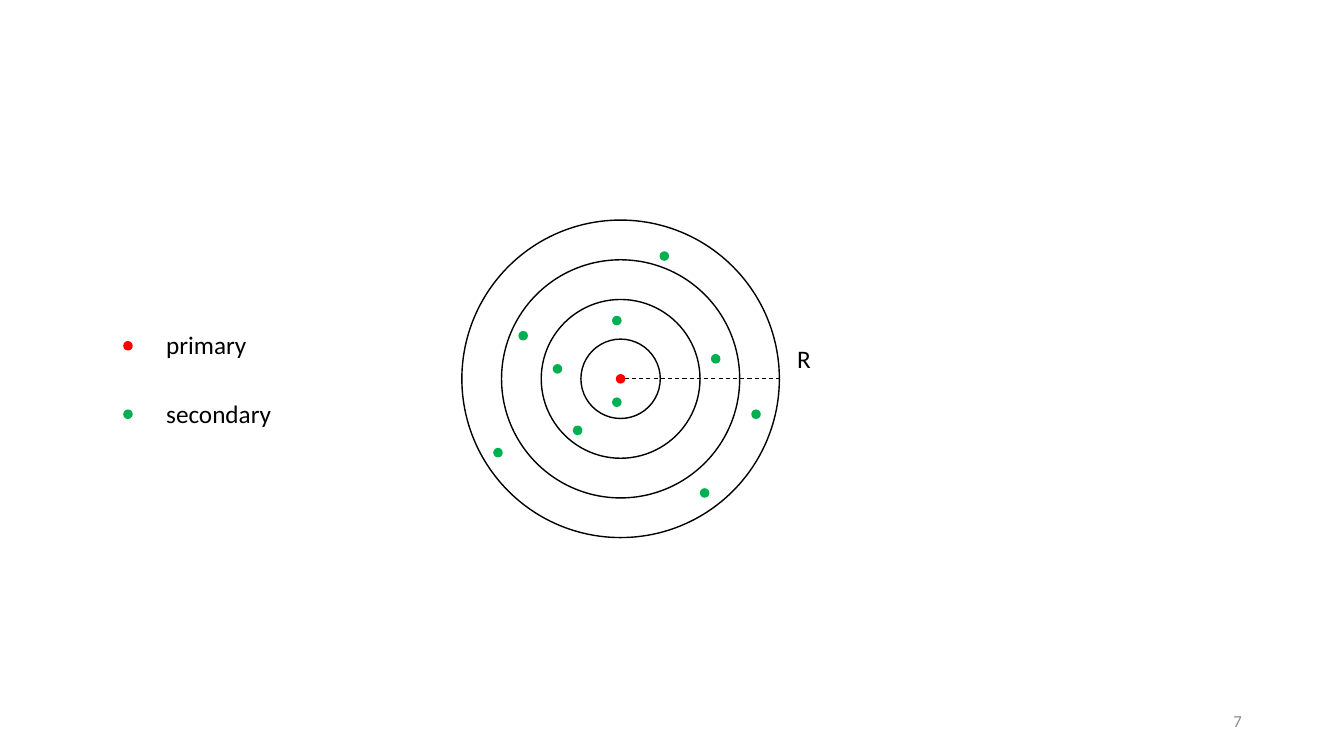
from lxml.etree import SubElement
from pptx import Presentation
from pptx.dml.color import RGBColor
from pptx.enum.dml import MSO_LINE
from pptx.enum.shapes import MSO_CONNECTOR, MSO_SHAPE
from pptx.enum.text import MSO_ANCHOR, PP_ALIGN
from pptx.oxml.ns import qn
from pptx.util import Pt

BLACK = RGBColor(0x00, 0x00, 0x00)
WHITE = RGBColor(0xFF, 0xFF, 0xFF)
RED = RGBColor(0xFF, 0x00, 0x00)
GREEN = RGBColor(0x00, 0xB0, 0x50)
GREY = RGBColor(0x8C, 0x8C, 0x8C)

FONT = "Calibri"
CX, CY = 443.3, 270.6
RING_STEP = 28.35
RINGS = 4
DOT_RADIUS = 2.9

# Centres of the secondary dots
SECONDARY = [
    (373.7, 239.8), (474.5, 182.9), (440.6, 287.3), (412.6, 307.4),
    (355.7, 323.3), (398.2, 263.5), (511.2, 256.3), (440.6, 229),
    (503.3, 352.1), (540, 295.9),
]

LEGEND_X = 91.4
LEGEND = [("primary", RED, 247), ("secondary", GREEN, 295.9)]


def add_circle(s, x, y, radius, fill, line):
    sp = s.shapes.add_shape(MSO_SHAPE.OVAL, Pt(x - radius), Pt(y - radius),
                            Pt(2 * radius), Pt(2 * radius))
    sp.shadow.inherit = False
    sp.fill.solid()
    sp.fill.fore_color.rgb = fill
    sp.line.color.rgb = line
    sp.line.width = Pt(1)


def add_dot(s, x, y, color):
    add_circle(s, x, y, DOT_RADIUS, color, color)


def add_dashed_line(s, x1, y1, x2, y2):
    c = s.shapes.add_connector(MSO_CONNECTOR.STRAIGHT,
                               Pt(x1), Pt(y1), Pt(x2), Pt(y2))
    c.line.color.rgb = BLACK
    c.line.width = Pt(0.75)
    c.line.dash_style = MSO_LINE.DASH
    SubElement(c._element.spPr, qn("a:effectLst"))


def add_label(s, text, x, y, width, size=18, color=BLACK,
              align=PP_ALIGN.LEFT, anchor=MSO_ANCHOR.TOP, wrap=False):
    tf = s.shapes.add_textbox(Pt(x), Pt(y), Pt(width), Pt(29)).text_frame
    tf.word_wrap = wrap
    tf.vertical_anchor = anchor
    p = tf.paragraphs[0]
    p.text = text
    p.alignment = align
    font = p.runs[0].font
    font.name = FONT
    font.size = Pt(size)
    font.color.rgb = color


def main():
    prs = Presentation()
    prs.slide_width, prs.slide_height = Pt(960), Pt(540)
    s = prs.slides.add_slide(prs.slide_layouts[6])

    # Concentric rings, largest at the back
    for n in range(RINGS, 0, -1):
        add_circle(s, CX, CY, n * RING_STEP, WHITE, BLACK)

    # Primary in the centre, secondaries around it
    add_dot(s, CX, CY, RED)
    for x, y in SECONDARY:
        add_dot(s, x, y, GREEN)

    # Radius
    add_dashed_line(s, CX + DOT_RADIUS, CY, CX + RINGS * RING_STEP, CY)
    add_label(s, "R", 562.3, 241.9, 24.5, wrap=True)

    # Legend
    for text, color, y in LEGEND:
        add_dot(s, LEGEND_X, y, color)
        add_label(s, text, 111.6, y - 15.1, 90 if color == GREEN else 72.7)

    # Slide number
    add_label(s, "7", 678.2, 500.5, 216, 12, GREY,
              PP_ALIGN.RIGHT, MSO_ANCHOR.MIDDLE, wrap=True)

    prs.save("out.pptx")


if __name__ == "__main__":
    main()
